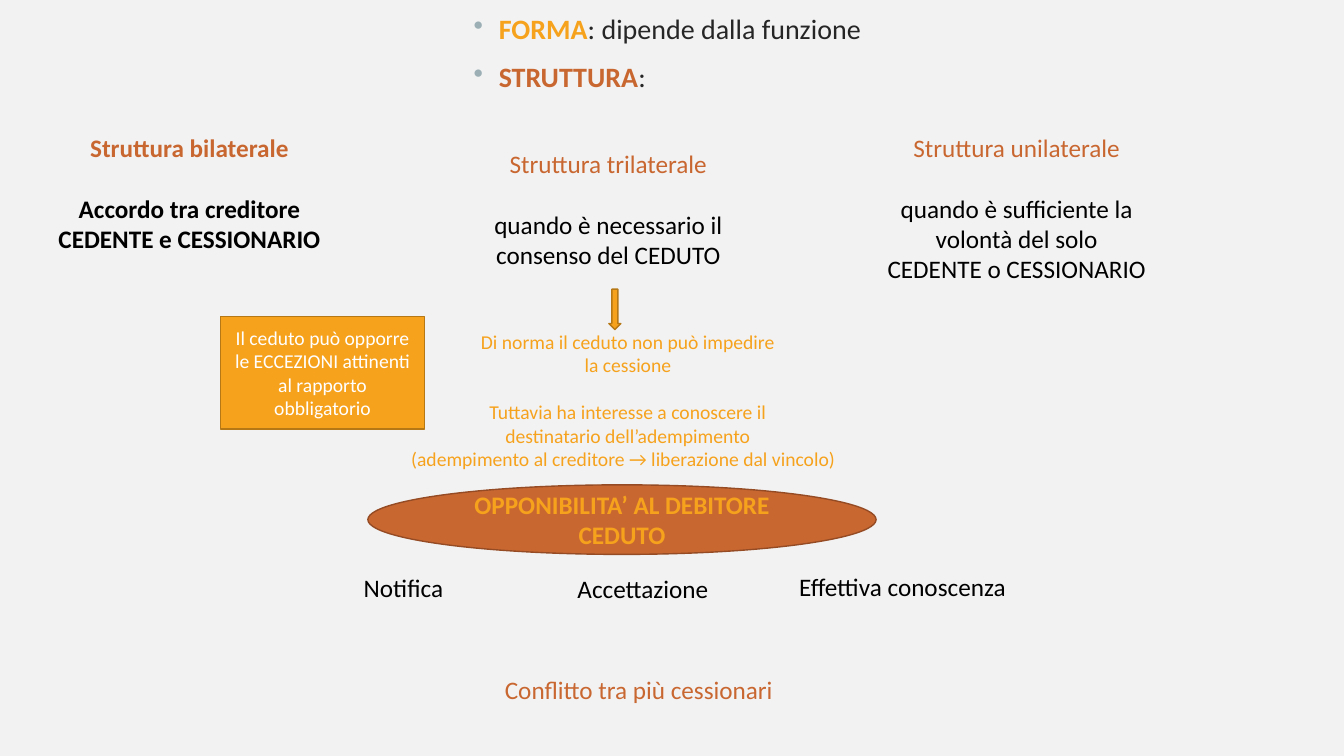
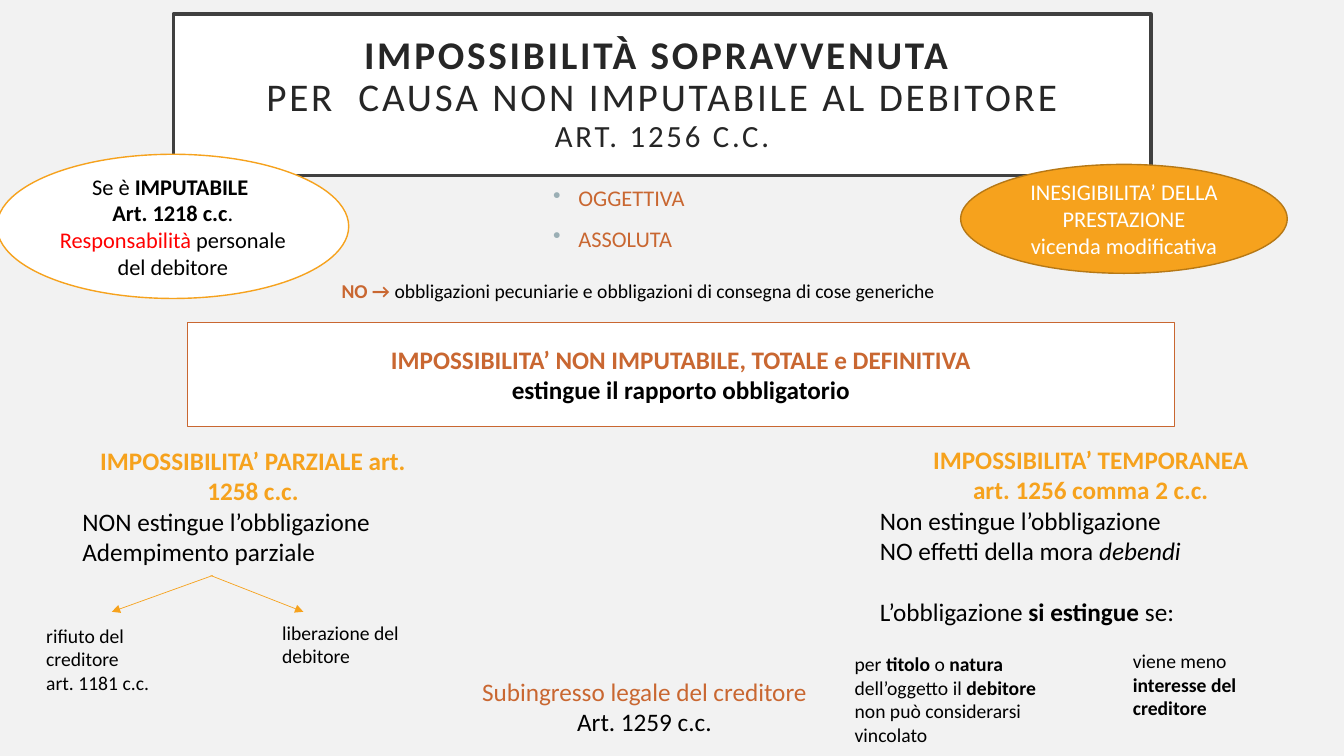
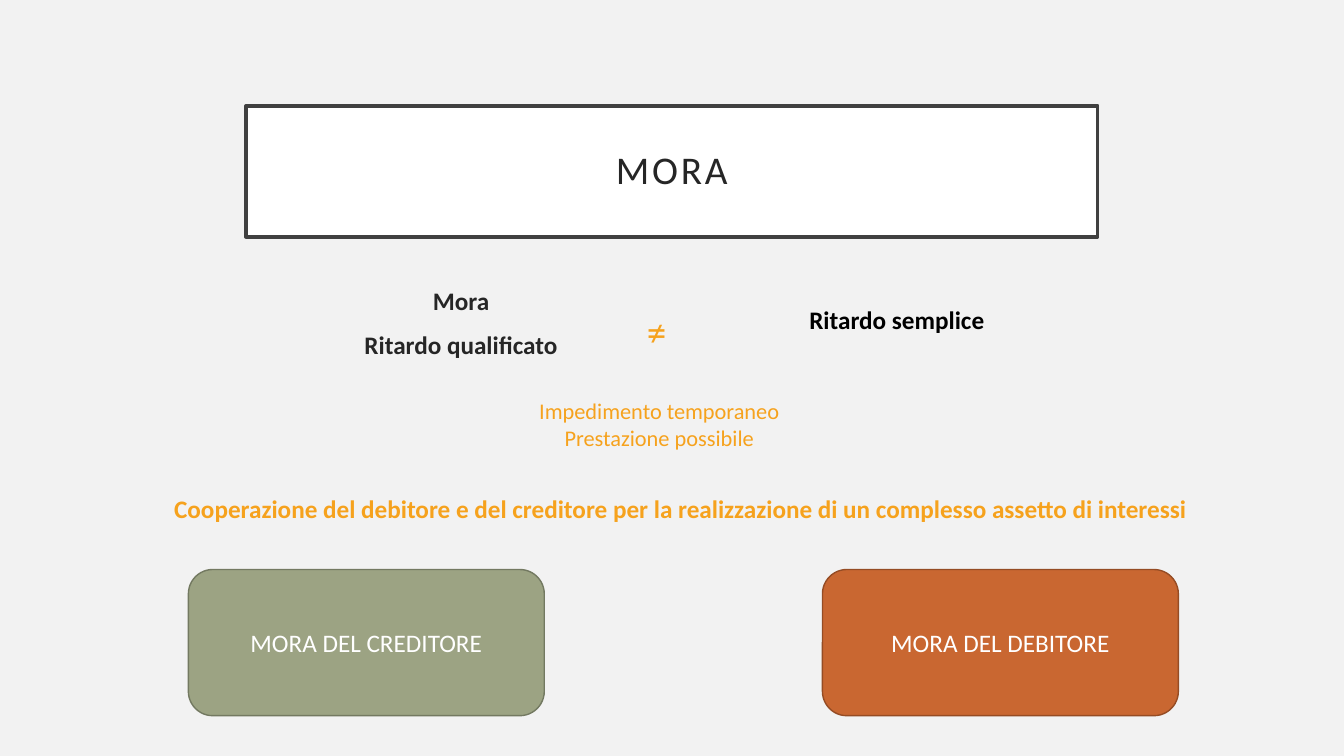
from dataclasses import dataclass

from lxml import etree
from pptx import Presentation
from pptx.dml.color import RGBColor
from pptx.enum import shapes, text
from pptx.oxml import ns
from pptx.util import Pt

FONT = "Calibri"
PAPER = RGBColor(0xF2, 0xF2, 0xF2)
WHITE = RGBColor(0xFF, 0xFF, 0xFF)
BLACK = RGBColor(0, 0, 0)
INK = RGBColor(0x26, 0x26, 0x26)
FRAME = RGBColor(0x40, 0x40, 0x40)
AMBER = RGBColor(0xF6, 0xA2, 0x1D)
AMBER_EDGE = RGBColor(0xB6, 0x78, 0x15)
RUST = RGBColor(0xC9, 0x67, 0x31)
RUST_EDGE = RGBColor(0x95, 0x4C, 0x24)
SAGE = RGBColor(0x9C, 0xA3, 0x83)
SAGE_EDGE = RGBColor(0x73, 0x79, 0x61)
RED = RGBColor(0xFF, 0, 0)
BULLET = RGBColor(0x9B, 0xAF, 0xB5)

LEFT, CENTER = text.PP_ALIGN.LEFT, text.PP_ALIGN.CENTER
KIND = shapes.MSO_SHAPE


@dataclass
class Span:
    """Piece of a line; None takes the value of its line."""
    words: str
    color: RGBColor = None
    bold: bool = None
    italic: bool = False


@dataclass
class Line:
    """Paragraph of strings and Spans; None takes the value of its box."""
    spans: list
    color: RGBColor = None
    bold: bool = None
    align: int = None
    size: float = None
    before: float = 0


def pick(*choices):
    return next((c for c in choices if c is not None), None)


def strong(words):
    return Span(words, bold=True)


def write(frame, lines, size=18, color=BLACK, bold=False, align=LEFT):
    frame.word_wrap = True
    for index, line in enumerate(lines):
        if isinstance(line, str):
            line = Line([line])
        paragraph = frame.paragraphs[0] if index == 0 else frame.add_paragraph()
        paragraph.alignment = pick(line.align, align)
        paragraph.space_before = Pt(line.before)
        for span in line.spans:
            if isinstance(span, str):
                span = Span(span)
            run = paragraph.add_run()
            run.text = span.words
            run.font.name = FONT
            run.font.size = Pt(pick(line.size, size))
            run.font.bold = pick(span.bold, line.bold, bold)
            run.font.italic = span.italic
            run.font.color.rgb = pick(span.color, line.color, color)


def add_text(slide, box, lines, **style):
    frame = slide.shapes.add_textbox(*map(Pt, box)).text_frame
    write(frame, lines, **style)
    return frame


def add_bullets(slide, box, lines, **style):
    frame = add_text(slide, box, lines, **style)
    for paragraph in frame.paragraphs:
        paragraph.space_before = Pt(10)
        props = paragraph._p.get_or_add_pPr()
        props.set("marL", str(Pt(18)))
        props.set("indent", str(Pt(-18)))
        tint = etree.SubElement(props, ns.qn("a:buClr"))
        etree.SubElement(tint, ns.qn("a:srgbClr")).set("val", str(BULLET))
        etree.SubElement(props, ns.qn("a:buChar")).set("char", "•")


def add_panel(slide, kind, box, fill, edge, lines=(), width=1, **style):
    panel = slide.shapes.add_shape(kind, *map(Pt, box))
    panel.shadow.inherit = False
    panel.fill.solid()
    panel.fill.fore_color.rgb = fill
    panel.line.color.rgb = edge
    panel.line.width = Pt(width)
    panel.text_frame.vertical_anchor = text.MSO_ANCHOR.MIDDLE
    write(panel.text_frame, lines, align=CENTER, **style)
    return panel


def add_title(slide, box, lines):
    frame = add_panel(slide, KIND.RECTANGLE, box, WHITE, FRAME, lines,
                      width=2.5, size=28, color=INK).text_frame
    frame.margin_left = frame.margin_right = Pt(14.4)
    frame.margin_top = frame.margin_bottom = Pt(14.4)
    for paragraph in frame.paragraphs:
        paragraph.line_spacing = 0.9
        for run in paragraph.runs:
            run.font._element.set("spc", "200")


def add_arrow(slide, start, end):
    arrow = slide.shapes.add_connector(
        shapes.MSO_CONNECTOR.STRAIGHT, *map(Pt, start + end))
    arrow.line.color.rgb = AMBER
    arrow.line.width = Pt(0.5)
    outline = arrow.line._get_or_add_ln()
    etree.SubElement(outline, ns.qn("a:tailEnd")).set("type", "triangle")
    etree.SubElement(arrow._element.spPr, ns.qn("a:effectLst"))


def build_assignment(slide):
    add_bullets(slide, (331.2, 5, 321, 84), [
        Line([Span("FORMA", AMBER, True), ": dipende dalla funzione"]),
        Line([Span("STRUTTURA", RUST, True), ":"]),
    ], size=20, color=INK)

    structures = [
        ((18, 90.7, 234.7, 117), "Struttura bilaterale",
         "Accordo tra creditore CEDENTE e CESSIONARIO", True),
        ((316, 102.2, 237, 94), "Struttura trilaterale",
         "quando è necessario il consenso del CEDUTO", False),
        ((625.7, 90.7, 201, 160), "Struttura unilaterale",
         "quando è sufficiente la volontà del solo CEDENTE o CESSIONARIO", False),
    ]
    for box, heading, meaning, bold in structures:
        add_text(slide, box, [Line([heading], RUST), Line([meaning], before=22)],
                 bold=bold, align=CENTER)

    add_text(slide, (335.5, 231.8, 226, 92), [
        "Di norma il ceduto non può impedire la cessione",
        Line(["Tuttavia ha interesse a conoscere il destinatario dell’adempimento"],
             before=17),
    ], size=14, color=AMBER, align=CENTER)
    add_panel(slide, KIND.DOWN_ARROW, (434.9, 206.6, 8.6, 28.8), AMBER, AMBER_EDGE)
    add_text(slide, (286.6, 315.4, 324, 24.5),
             ["(adempimento al creditore → liberazione dal vincolo)"],
             size=14, color=AMBER)
    add_panel(slide, KIND.OVAL, (262.8, 346.3, 363, 49.7), RUST, RUST_EDGE,
              ["OPPONIBILITA’ AL DEBITORE CEDUTO"], color=AMBER, bold=True)

    for left, top, means in [(252.7, 405.4, "Notifica"),
                             (405.4, 406, "Accettazione"),
                             (563.8, 404.6, "Effettiva conoscenza")]:
        add_text(slide, (left, top, 170, 29), [means])
    add_text(slide, (353.5, 478, 214, 29), ["Conflitto tra più cessionari"],
             color=RUST)
    add_panel(slide, KIND.RECTANGLE, (157.7, 226, 145.4, 80.6), AMBER, AMBER_EDGE,
              ["Il ceduto può opporre le ECCEZIONI attinenti al rapporto obbligatorio"],
              size=14, color=WHITE)


def build_impossibility(slide):
    add_title(slide, (123.8, 10.1, 698.4, 115.2), [
        Line(["IMPOSSIBILITÀ SOPRAVVENUTA "], bold=True),
        "PER  CAUSA NON IMPUTABILE AL DEBITORE",
        Line(["ART. 1256 C.C."], size=22),
    ])
    add_bullets(slide, (388.1, 128.2, 289.4, 66), ["OGGETTIVA", "ASSOLUTA"],
                size=16, color=RUST)
    add_text(slide, (236.9, 195.8, 582.5, 24.5), [Line([
        Span("NO → ", RUST, True),
        "obbligazioni pecuniarie e obbligazioni di consegna di cose generiche",
    ])], size=14)

    add_text(slide, (51.8, 314.6, 257.8, 117), [
        Line(["IMPOSSIBILITA’ PARZIALE art. 1258 c.c."], AMBER, True, CENTER),
        "NON estingue l’obbligazione",
        "Adempimento parziale",
    ])
    add_text(slide, (621.4, 313.9, 315.4, 138), [
        Line(["IMPOSSIBILITA’ TEMPORANEA"], AMBER, True, CENTER),
        Line(["art. 1256 comma 2 c.c."], AMBER, True, CENTER),
        "Non estingue l’obbligazione",
        Line(["NO effetti della mora ", Span("debendi", italic=True)]),
        Line(["L’obbligazione ", strong("si estingue "), "se:"], before=22),
    ])

    outcomes = [
        ((25.9, 442.1, 114.5, 58), ["rifiuto del creditore", "art. 1181 c.c."]),
        ((194.4, 439.9, 114.5, 41), ["liberazione del debitore"]),
        ((603.4, 462.2, 160.6, 75), [Line([
            "per ", strong("titolo"), " o ", strong("natura"), " dell’oggetto il ",
            strong("debitore"), " non può considerarsi vincolato"])]),
        ((802.1, 460.1, 114.5, 58),
         [Line(["viene meno ", strong("interesse del creditore")])]),
    ]
    for box, lines in outcomes:
        add_text(slide, box, lines, size=14)

    add_panel(slide, KIND.OVAL, (686.2, 117.4, 233.3, 77.8), AMBER, AMBER_EDGE,
              ["INESIGIBILITA’ DELLA PRESTAZIONE", "vicenda modificativa"],
              size=16, color=WHITE)
    add_panel(slide, KIND.OVAL, (-2.2, 110.2, 251.3, 103), WHITE, AMBER, [
        Line(["Se è ", strong("IMPUTABILE ")]),
        Line([strong("Art. 1218 c.c"), "."]),
        Line([Span("Responsabilità", RED), " personale del debitore"]),
    ], size=16)
    for start, end in [(151.9, 79.9), (150.5, 216.7)]:
        add_arrow(slide, (start, 411.1), (end, 437))
    add_panel(slide, KIND.RECTANGLE, (133.9, 230.4, 704.9, 74.2), WHITE, RUST, [
        Line(["IMPOSSIBILITA’ NON IMPUTABILE, TOTALE e DEFINITIVA"], RUST),
        "estingue il rapporto obbligatorio",
    ], bold=True)
    add_text(slide, (331.9, 479.5, 257, 51), [
        Line(["Subingresso legale del creditore"], RUST),
        "Art. 1259 c.c.",
    ], align=CENTER)


def build_delay(slide):
    add_title(slide, (175.7, 75.6, 608.4, 93.6), ["MORA"])
    add_text(slide, (231.8, 200.2, 195, 86.4), [
        Line(["Mora"], before=10),
        Line(["Ritardo qualificato"], before=10),
    ], color=INK, bold=True, align=CENTER)
    add_text(slide, (571, 213.8, 203, 29), ["Ritardo semplice"], bold=True)
    add_text(slide, (455, 216, 31, 41), ["≠"], size=28, color=AMBER)
    add_text(slide, (365.8, 280.1, 210.2, 46),
             ["Impedimento temporaneo", "Prestazione possibile"],
             size=16, color=AMBER, align=CENTER)
    add_text(slide, (51.8, 348.5, 869, 29),
             ["Cooperazione del debitore e del creditore per la realizzazione "
              "di un complesso assetto di interessi"],
             color=AMBER, bold=True, align=CENTER)
    for left, fill, edge, party in [(134.6, SAGE, SAGE_EDGE, "CREDITORE"),
                                    (587.5, RUST, RUST_EDGE, "DEBITORE")]:
        add_panel(slide, KIND.ROUNDED_RECTANGLE, (left, 406.8, 254.2, 104.4),
                  fill, edge, [f"MORA DEL {party}"], color=WHITE)


def main():
    deck = Presentation()
    deck.slide_width, deck.slide_height = Pt(960), Pt(540)
    backdrop = deck.slide_master.background.fill
    backdrop.solid()
    backdrop.fore_color.rgb = PAPER
    blank = deck.slide_layouts[6]
    for build in (build_assignment, build_impossibility, build_delay):
        build(deck.slides.add_slide(blank))
    deck.save("out.pptx")


if __name__ == "__main__":
    main()
